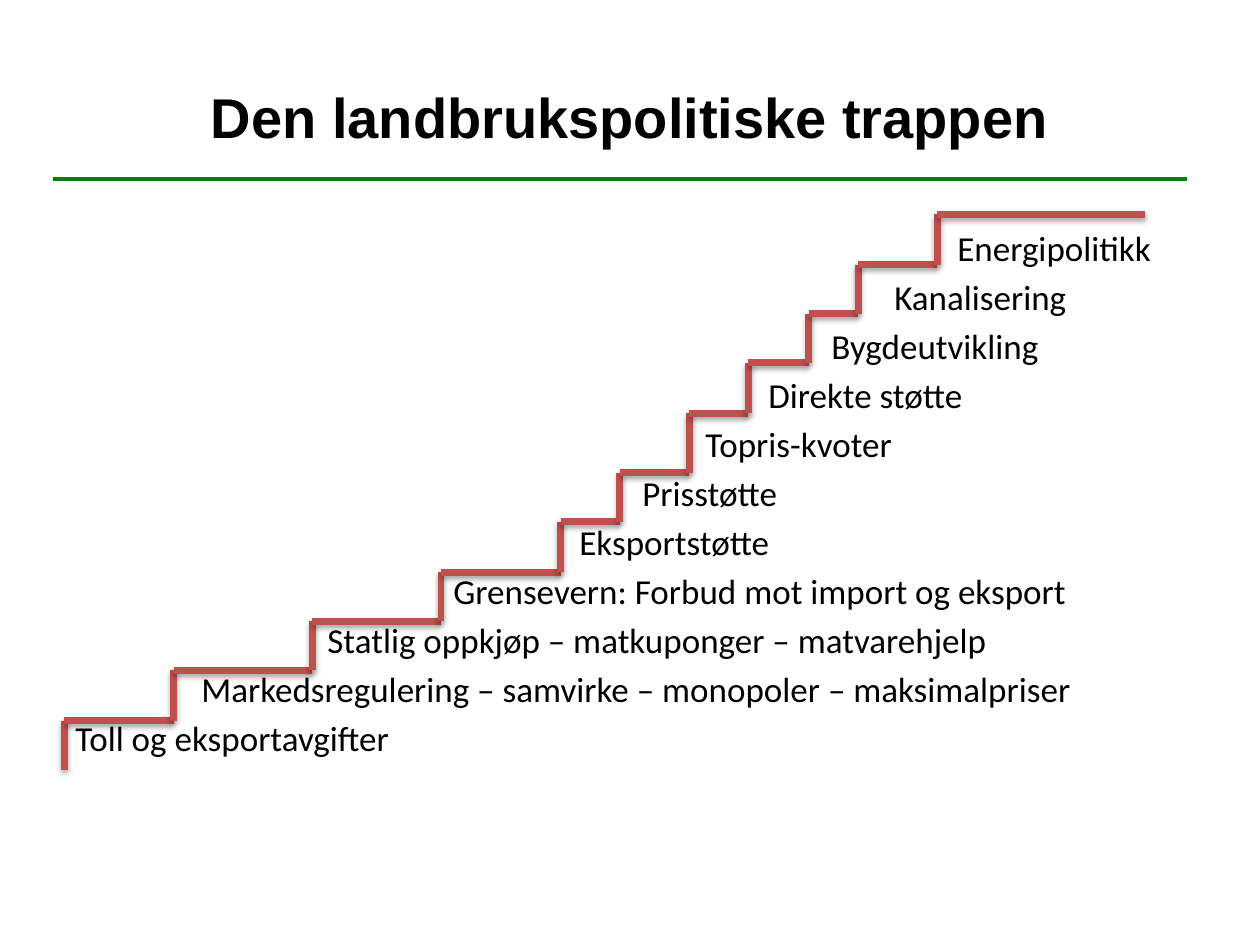
from dataclasses import dataclass
from itertools import pairwise

from lxml.etree import SubElement
from pptx import Presentation
from pptx.dml.color import RGBColor
from pptx.enum.shapes import MSO_CONNECTOR
from pptx.enum.text import MSO_ANCHOR, PP_ALIGN
from pptx.oxml.ns import qn
from pptx.util import Inches, Pt


@dataclass(frozen=True)
class Theme:
    text = RGBColor(0, 0, 0)
    stair = RGBColor(0xC0, 0x50, 0x4D)
    rule = RGBColor(0, 0x80, 0)
    title_font = {"name": "Arial", "size": Pt(32), "bold": True}
    label_font = {"name": "Calibri", "size": Pt(20), "bold": False}
    label_gap = Pt(4)
    stair_width = Pt(4)
    rule_width = Pt(2.25)


THEME = Theme()
TAB = 0.5

# Each label with its indent in tab steps, from the top step down
LABELS = [
    ("Energipolitikk", 14),
    ("Kanalisering", 13),
    ("Bygdeutvikling", 12),
    ("Direkte støtte", 11),
    ("Topris-kvoter", 10),
    ("Prisstøtte", 9),
    ("Eksportstøtte", 8),
    ("Grensevern: Forbud mot import og eksport", 6),
    ("Statlig oppkjøp – matkuponger – matvarehjelp", 4),
    ("Markedsregulering – samvirke – monopoler – maksimalpriser", 2),
    ("Toll og eksportavgifter", 0),
]

# Riser position and tread height of each step, relative to the foot of the stairs
STEPS = [
    (0, 0.39), (0.87, 0.79), (1.97, 1.18), (2.99, 1.57), (3.94, 1.97), (4.41, 2.36),
    (4.96, 2.83), (5.43, 3.23), (5.91, 3.62), (6.3, 4.01), (6.93, 4.41),
]
STAIR_LENGTH = 8.58


def add_text_frame(slide, left, top, width, height, anchor):
    box = slide.shapes.add_textbox(Inches(left), Inches(top), Inches(width), Inches(height))
    frame = box.text_frame
    frame.word_wrap = True
    frame.vertical_anchor = anchor
    return frame


def write(paragraph, text, font_format):
    run = paragraph.add_run()
    run.text = text
    for name, value in font_format.items():
        setattr(run.font, name, value)
    run.font.color.rgb = THEME.text


def add_line(slide, start, end, color, width, shadow=False):
    line = slide.shapes.add_connector(
        MSO_CONNECTOR.STRAIGHT, *(Inches(value) for value in (*start, *end)))
    line.line.color.rgb = color
    line.line.width = width
    effects = SubElement(line._element.spPr, qn("a:effectLst"))
    if shadow:
        outer = SubElement(effects, qn("a:outerShdw"), blurRad=str(Pt(3.1)),
                           dist=str(Pt(1.8)), dir="5400000", rotWithShape="0")
        shade = SubElement(outer, qn("a:srgbClr"), val="000000")
        SubElement(shade, qn("a:alpha"), val="35000")


def add_title(slide, left, top, width, height):
    frame = add_text_frame(slide, left, top, width, height, MSO_ANCHOR.MIDDLE)
    paragraph = frame.paragraphs[0]
    paragraph.alignment = PP_ALIGN.CENTER
    write(paragraph, "Den landbrukspolitiske trappen", THEME.title_font)


def add_labels(slide, left, top, width, height):
    frame = add_text_frame(slide, left, top, width, height, MSO_ANCHOR.TOP)
    for index, (label, tabs) in enumerate(LABELS):
        paragraph = frame.add_paragraph() if index else frame.paragraphs[0]
        paragraph.space_before = THEME.label_gap
        properties = paragraph._p.get_or_add_pPr()
        properties.set("marL", str(Inches(tabs * TAB)))
        properties.set("indent", "0")
        write(paragraph, label, THEME.label_font)


def add_stairs(slide, left, bottom):
    """Draw risers and treads upwards from the foot at left, bottom."""
    corners = [(0, 0)]
    for position, rise in STEPS:
        corners += [(position, corners[-1][1]), (position, rise)]
    corners.append((STAIR_LENGTH, corners[-1][1]))
    points = [(left + x, bottom - y) for x, y in corners[1:]]
    for start, end in pairwise(points):
        add_line(slide, start, end, THEME.stair, THEME.stair_width, shadow=True)


def main():
    presentation = Presentation()
    presentation.slide_width, presentation.slide_height = Inches(10), Inches(7.5)
    slide = presentation.slides.add_slide(presentation.slide_layouts[6])
    add_title(slide, 0.5, 0.3, 9, 1.25)
    add_labels(slide, 0.5, 1.75, 9, 4.95)
    add_stairs(slide, 0.51, 6.11)
    add_line(slide, (0.42, 1.42), (9.42, 1.42), THEME.rule, THEME.rule_width)
    presentation.save("out.pptx")


if __name__ == "__main__":
    main()
